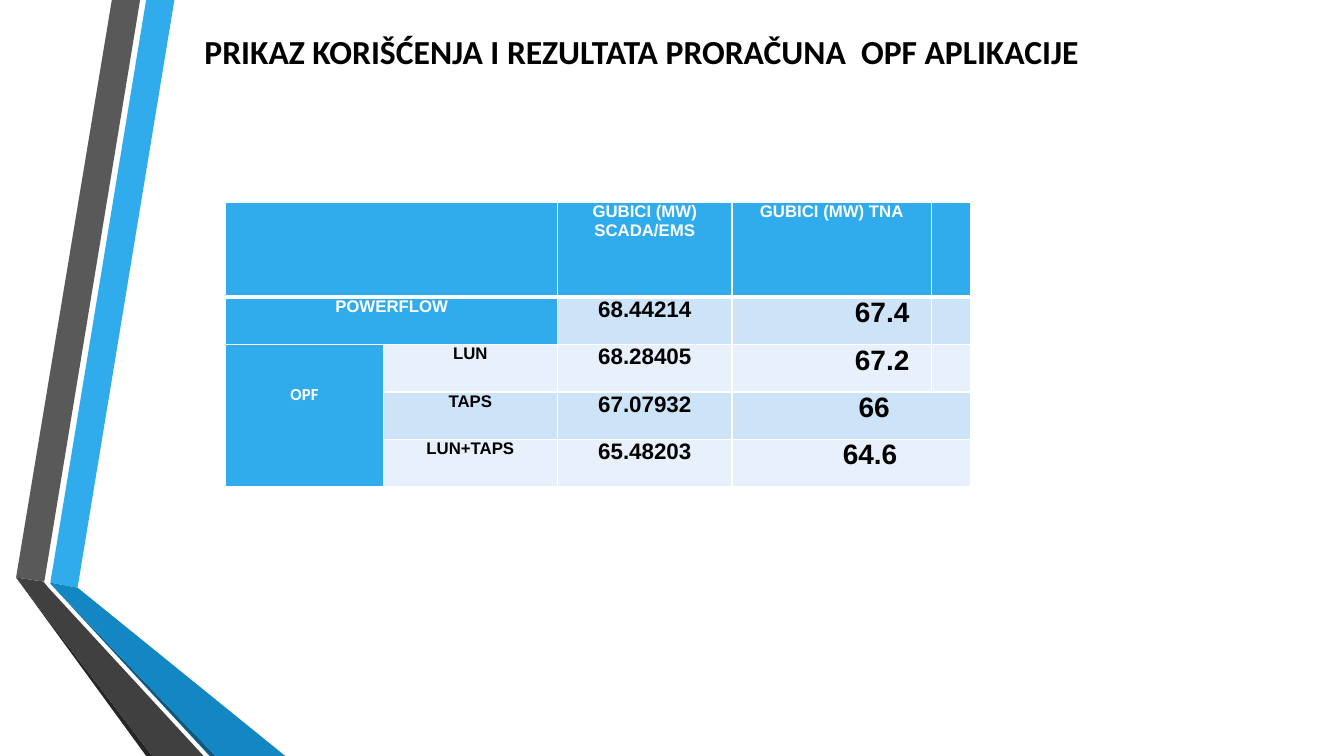
from lxml import etree
from pptx import Presentation
from pptx.dml.color import RGBColor
from pptx.enum.text import PP_ALIGN
from pptx.oxml.ns import qn
from pptx.util import Inches, Pt

CENTER = PP_ALIGN.CENTER
COLORS = {
    "blue": "30ACEC", "ocean": "1287C3", "navy": "0C5A82",
    "gray": "595959", "dark": "404040", "coal": "262626",
    "band": "CDE3F8", "pale": "E8F1FB",
    "white": "FFFFFF", "black": "000000",
}

# Ribbon outlines, back to front
RIBBONS = [
    ("blue", [(0.5, 5.78), (0.77, 5.83), (1.73, 0), (1.45, 0)]),
    ("gray", [(1.39, 0), (1.11, 0), (0.16, 5.73), (0.44, 5.77)]),
    ("coal", [(0.16, 5.73), (1.45, 7.5), (1.51, 7.5)]),
    ("navy", [(0.5, 5.79), (2.08, 7.5), (2.14, 7.5)]),
    ("ocean", [(0.5, 5.79), (2.14, 7.5), (2.83, 7.5), (0.77, 5.83),
               (0.5, 5.78)]),
    ("dark", [(2.02, 7.5), (0.48, 5.83), (0.43, 5.77), (0.16, 5.73),
              (1.51, 7.5)]),
]

# Table layout: sizes, then merged ranges as (row, col, last row, last col)
COLS = [1.56, 1.73, 1.73, 1.98, 0.39]
ROWS = [0.94] + [0.47] * 4
MERGES = [(0, 0, 0, 1), (1, 0, 1, 1), (2, 0, 4, 0), (3, 3, 3, 4), (4, 3, 4, 4)]
HEADS = {(0, 2): "GUBICI (MW) SCADA/EMS", (0, 3): "GUBICI (MW) TNA",
         (1, 0): "POWERFLOW"}
MODES = ["LUN", "TAPS", "LUN+TAPS"]
SCADA = ["68.44214", "68.28405", "67.07932", "65.48203"]
TNA = [("67.4", 1), ("67.2", 1), ("66", 0.45), ("64.6", 0.37)]  # value, indent


def rgb(name):
    return RGBColor.from_string(COLORS[name])


def write(frame, text, size, color="black", face="Arial"):
    para = frame.paragraphs[0]
    para.alignment = CENTER
    run = para.add_run()
    run.text = text
    style = {"name": face, "size": Pt(size), "bold": True}
    for key, value in style.items():
        setattr(run.font, key, value)
    run.font.color.rgb = rgb(color)


def add_ribbon(slide, color, points):
    spots = [(Inches(x), Inches(y)) for x, y in points]
    pen = slide.shapes.build_freeform(*spots[0])
    pen.add_line_segments(spots[1:], close=True)
    shape = pen.convert_to_shape()
    shape.shadow.inherit = False
    shape.fill.solid()
    shape.fill.fore_color.rgb = rgb(color)
    shape.line.fill.background()


def add_title(slide, text):
    box = slide.shapes.add_textbox(
        Inches(1.89), Inches(0.26), Inches(8.95), Inches(0.91))
    box.text_frame.word_wrap = True
    write(box.text_frame, text, 24, face="Calibri")


def add_edges(cell, row):
    props = cell._tc.get_or_add_tcPr()
    thick = {0: "lnB", 1: "lnT"}.get(row)  # rule below the header row
    for side in ("lnL", "lnR", "lnT", "lnB"):
        width = Pt(3 if side == thick else 1)
        line = etree.SubElement(props, qn("a:" + side), w=str(width))
        fill = etree.SubElement(line, qn("a:solidFill"))
        etree.SubElement(fill, qn("a:srgbClr"), val=COLORS["white"])


def style_cell(cell, row, col):
    margins = {"margin_left": 0.07, "margin_right": 0.07,
               "margin_top": 0, "margin_bottom": 0}
    for key, value in margins.items():
        setattr(cell, key, Inches(value))
    add_edges(cell, row)
    head = row == 0 or col == 0 or (row, col) == (1, 1)
    cell.fill.solid()
    cell.fill.fore_color.rgb = rgb(
        "blue" if head else "band" if row % 2 else "pale")


def add_table(slide):
    table = slide.shapes.add_table(
        len(ROWS), len(COLS), Inches(2.24), Inches(2.01),
        Inches(sum(COLS)), Inches(sum(ROWS))).table
    for col, width in enumerate(COLS):
        table.columns[col].width = Inches(width)
    for row, height in enumerate(ROWS):
        table.rows[row].height = Inches(height)
        for col in range(len(COLS)):
            style_cell(table.cell(row, col), row, col)
    for top, left, bottom, right in MERGES:
        table.cell(top, left).merge(table.cell(bottom, right))

    # Headings
    for (row, col), text in HEADS.items():
        write(table.cell(row, col).text_frame, text, 12, "white")
    group = table.cell(2, 0)
    group.margin_top = Inches(0.4)
    write(group.text_frame, "OPF", 12, "white", "Calibri")

    # Modes and losses
    for row, mode in enumerate(MODES, 2):
        write(table.cell(row, 1).text_frame, mode, 12)
    for row, (loss, (value, indent)) in enumerate(zip(SCADA, TNA), 1):
        write(table.cell(row, 2).text_frame, loss, 16)
        cell = table.cell(row, 3)
        cell.margin_left = Inches(0.07 + indent)
        write(cell.text_frame, value, 20)


def main():
    deck = Presentation()
    deck.slide_width, deck.slide_height = Inches(13.33), Inches(7.5)
    slide = deck.slides.add_slide(deck.slide_layouts[6])
    for color, points in RIBBONS:
        add_ribbon(slide, color, points)
    add_title(slide, "PRIKAZ KORIŠĆENJA I REZULTATA PRORAČUNA  OPF APLIKACIJE")
    add_table(slide)
    deck.save("out.pptx")


if __name__ == "__main__":
    main()
